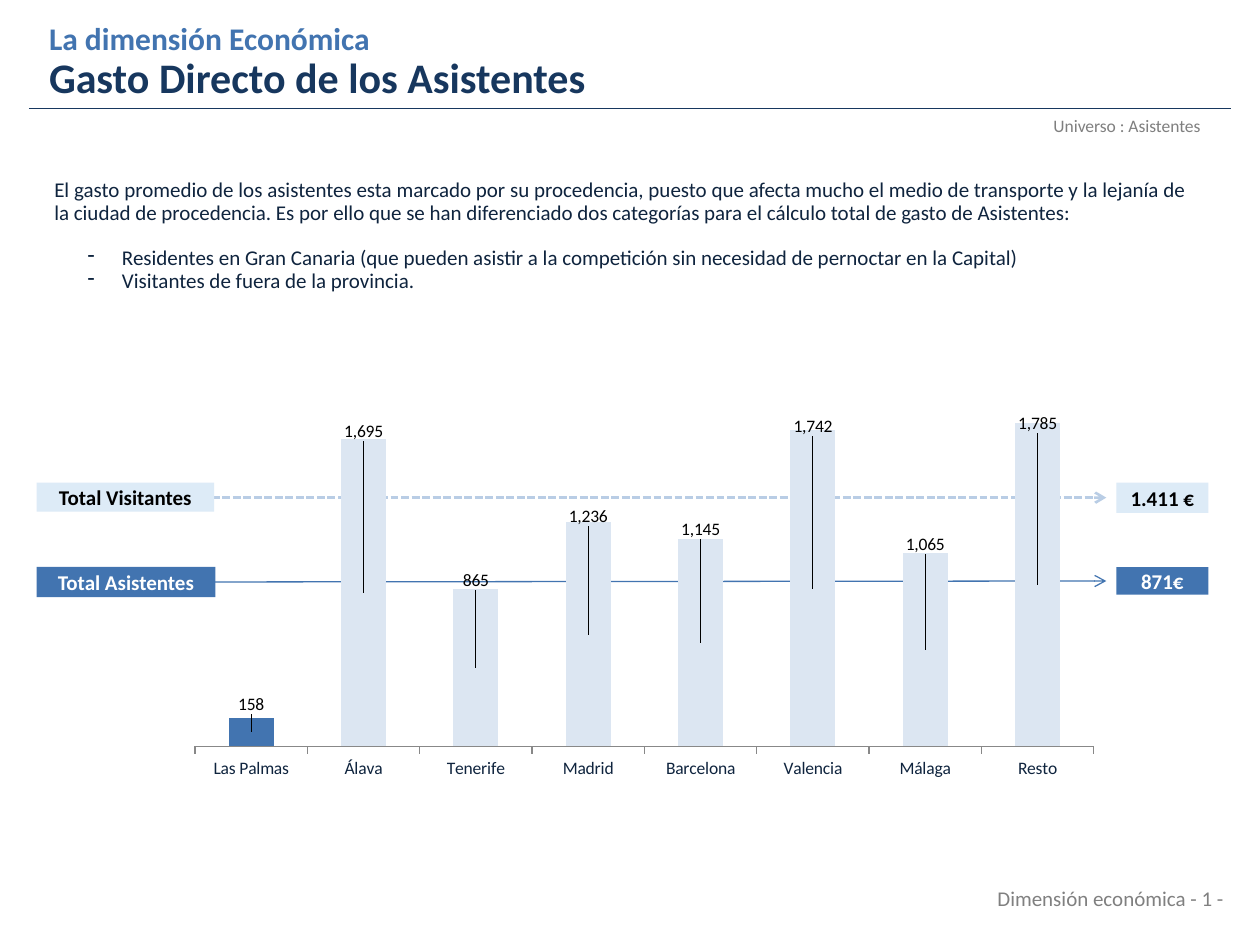
from dataclasses import dataclass

import pptx
import pptx.chart.data
import pptx.dml.color
import pptx.enum.chart
import pptx.enum.dml
import pptx.enum.shapes
import pptx.enum.text
import pptx.oxml
import pptx.oxml.ns
import pptx.util
from lxml import etree

Pt = pptx.util.Pt
RGB = pptx.dml.color.RGBColor
Align = pptx.enum.text.PP_ALIGN
Anchor = pptx.enum.text.MSO_ANCHOR
qn = pptx.oxml.ns.qn

FONT = "Calibri"
BLUE = RGB(0x42, 0x74, 0xB0)
NAVY = RGB(0x17, 0x37, 0x5E)
INK = RGB(0x0F, 0x24, 0x3E)
PALE = RGB(0xDD, 0xEB, 0xF7)
MIST = RGB(0xDC, 0xE6, 0xF2)
SKY = RGB(0xB9, 0xCD, 0xE5)
GRAY = RGB(0x7F, 0x7F, 0x7F)
SMOKE = RGB(0x80, 0x80, 0x80)
AXIS = RGB(0x88, 0x88, 0x88)
BLACK = RGB(0, 0, 0)
WHITE = RGB(255, 255, 255)


@dataclass
class Box:
    left: float
    top: float
    width: float
    height: float

    def lengths(self) -> list:
        return [Pt(n) for n in (self.left, self.top, self.width, self.height)]


@dataclass
class Tag:
    text: str
    box: Box
    fill: RGB
    color: RGB


@dataclass
class Rule:
    start: tuple
    end: tuple
    color: RGB
    width: float = 0.75
    arrow: bool = False
    dash: bool = False


@dataclass
class Bar:
    city: str
    spend: int
    lift: float  # label centre above the bar top, in points


RULES = [
    Rule((16.5, 62), (703.5, 62), NAVY),
    Rule((81.4, 332.6), (632.2, 332), BLUE, arrow=True),
    Rule((85, 284.4), (632.2, 284.4), SKY, 1.5, arrow=True, dash=True),
]
TAGS = [
    Tag("Total Asistentes", Box(20.9, 324, 102.2, 17.3), BLUE, WHITE),
    Tag("Total Visitantes", Box(20.9, 275.8, 101.5, 16.6), PALE, BLACK),
    Tag("1.411 €", Box(637.9, 275.8, 52.6, 17.3), PALE, BLACK),
    Tag("871€", Box(637.9, 324, 52.6, 15.8), BLUE, WHITE),
]
BARS = [
    Bar("Las Palmas", 158, 7.5), Bar("Álava", 1695, 4),
    Bar("Tenerife", 865, 5), Bar("Madrid", 1236, 3.5),
    Bar("Barcelona", 1145, 5), Bar("Valencia", 1742, 2),
    Bar("Málaga", 1065, 5), Bar("Resto", 1785, -0.5),
]
AREA = Box(100.8, 214.6, 535, 235.4)
PLOT = {"x": 0.02, "y": 0.02, "w": 0.96, "h": 0.88}
PEAK = 2000
INTRO = [
    "El gasto promedio de los asistentes esta marcado por su procedencia, "
    "puesto que afecta mucho el medio de transporte y la lejanía de la ciudad "
    "de procedencia. Es por ello que se han diferenciado dos categorías para "
    "el cálculo total de gasto de Asistentes:",
    " Residentes en Gran Canaria (que pueden asistir a la competición sin "
    "necesidad de pernoctar en la Capital)",
    " Visitantes de fuera de la provincia.",
]


def style(font, size: float, color: RGB, bold: bool = False) -> None:
    font.name, font.size, font.bold = FONT, Pt(size), bold
    font.color.rgb = color


def add_text(slide, box: Box, lines: list, size: float, color: RGB, align,
             space: float = 1, bold: bool = False, inset: bool = True,
             anchor=Anchor.MIDDLE):
    frame = slide.shapes.add_textbox(*box.lengths()).text_frame
    frame.word_wrap = True
    frame.vertical_anchor = anchor
    if not inset:
        frame.margin_left = frame.margin_right = 0
        frame.margin_top = frame.margin_bottom = 0
    frame.text = "\n".join(lines)
    for para in frame.paragraphs:
        para.alignment, para.line_spacing = align, space
        for run in para.runs:
            style(run.font, size, color, bold)
    return frame


def add_rule(slide, rule: Rule) -> None:
    kind = pptx.enum.shapes.MSO_CONNECTOR.STRAIGHT
    line = slide.shapes.add_connector(
        kind, *[Pt(n) for n in rule.start + rule.end])
    line.line.color.rgb = rule.color
    line.line.width = Pt(rule.width)
    if rule.dash:
        line.line.dash_style = pptx.enum.dml.MSO_LINE.SQUARE_DOT
    props = line._element.spPr
    if rule.arrow:
        etree.SubElement(props.find(qn("a:ln")), qn("a:tailEnd"), type="arrow")
    etree.SubElement(props, qn("a:effectLst"))


def add_tag(slide, tag: Tag) -> None:
    kind = pptx.enum.shapes.MSO_SHAPE.RECTANGLE
    shape = slide.shapes.add_shape(kind, *tag.box.lengths())
    shape.shadow.inherit = False
    shape.fill.solid()
    shape.fill.fore_color.rgb = tag.fill
    shape.line.fill.background()
    frame = shape.text_frame
    frame.vertical_anchor = Anchor.MIDDLE
    frame.text = tag.text
    frame.paragraphs[0].alignment = Align.CENTER
    style(frame.paragraphs[0].runs[0].font, 12, tag.color, True)


def add_layout(parent, spot: int, values: dict) -> None:
    layout = etree.Element(qn("c:layout"))
    manual = etree.SubElement(layout, qn("c:manualLayout"))
    for name, value in values.items():
        etree.SubElement(manual, qn("c:" + name), val=str(value))
    parent.insert(spot, layout)


def add_bars(slide, bars: list) -> None:
    kinds = pptx.enum.chart
    data = pptx.chart.data.CategoryChartData(number_format="#,##0")
    data.categories = [bar.city for bar in bars]
    data.add_series("Series 1", [bar.spend for bar in bars])
    chart = slide.shapes.add_chart(
        kinds.XL_CHART_TYPE.COLUMN_STACKED, *AREA.lengths(), data).chart
    chart.has_legend = chart.has_title = False
    style(chart.font, 10, BLACK)

    # Axes and plot area
    cats, vals = chart.category_axis, chart.value_axis
    style(cats.tick_labels.font, 10, INK)
    cats.format.line.color.rgb = AXIS
    cats.format.line.width = Pt(0.75)
    cats.major_tick_mark = kinds.XL_TICK_MARK.OUTSIDE
    vals.has_major_gridlines = vals.visible = False
    vals.minimum_scale, vals.maximum_scale = 0, PEAK
    area = chart._chartSpace.chart.plotArea
    for old in area.findall(qn("c:layout")):
        area.remove(old)
    add_layout(area, 0, {"layoutTarget": "inner", "xMode": "edge",
                         "yMode": "edge", **PLOT})

    # Columns and their labels
    plot = chart.plots[0]
    plot.gap_width, plot.overlap, plot.vary_by_categories = 150, 100, False
    series = plot.series[0]
    for fill, color in ((series.format.fill, MIST),
                        (series.points[0].format.fill, BLUE)):
        fill.solid()
        fill.fore_color.rgb = color
    labels = series.data_labels
    labels.show_value = True
    labels.number_format, labels.number_format_is_linked = "#,##0", False
    style(labels.font, 10, BLACK)
    for num, bar in enumerate(bars):
        label = series.points[num].data_label
        style(label.font, 10, BLACK)
        label.position = kinds.XL_LABEL_POSITION.CENTER
    for bar, item in zip(bars, labels._element.findall(qn("c:dLbl"))):
        rise = bar.spend / PEAK * PLOT["h"] / 2 + bar.lift / AREA.height
        add_layout(item, 1, {"x": 0, "y": round(-rise, 4)})


def main() -> None:
    deck = pptx.Presentation()
    deck.slide_width, deck.slide_height = Pt(720), Pt(540)
    slide = deck.slides.add_slide(deck.slide_layouts[6])

    # Heading
    head = add_text(slide, Box(28, 13, 652, 46),
                    ["La dimensión Económica\vGasto Directo de los Asistentes"],
                    24, NAVY, Align.LEFT, 0.9, True, False)
    style(head.paragraphs[0].runs[0].font, 18, BLUE, True)

    # Introduction with dashed items
    body = add_text(slide, Box(31, 102.2, 647.3, 65.5), INTRO, 12, INK,
                    Align.JUSTIFY, 0.9, inset=False)
    for para in body.paragraphs[1:]:
        para.level = 1
        props = para._p.get_or_add_pPr()
        props.set("marL", str(Pt(36)))
        props.set("indent", str(-Pt(17)))
        etree.SubElement(props, qn("a:buChar"), char="-")
    body.paragraphs[1].space_before = Pt(13)

    # Rules, notes, tags and chart
    for rule in RULES:
        add_rule(slide, rule)
    add_text(slide, Box(568, 62, 152, 22), ["Universo : Asistentes"],
             10, GRAY, Align.CENTER, 0.7)
    add_text(slide, Box(468, 502.6, 238.3, 21.6),
             ["Dimensión económica - 1 -"], 12, SMOKE, Align.RIGHT,
             anchor=Anchor.TOP)
    for tag in TAGS:
        add_tag(slide, tag)
    add_bars(slide, BARS)
    deck.save("out.pptx")


if __name__ == "__main__":
    main()
